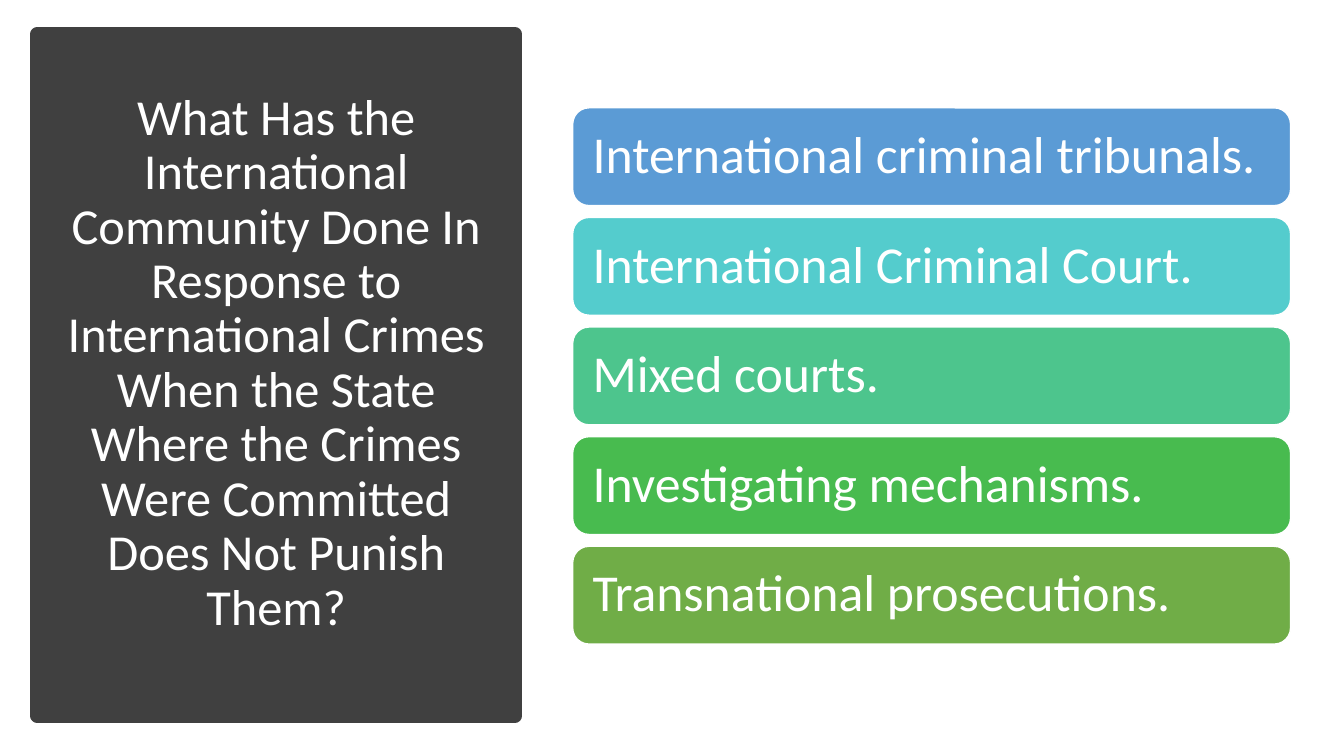
from dataclasses import dataclass

import pptx
import pptx.dml.color
import pptx.enum.shapes
import pptx.enum.text
import pptx.presentation
import pptx.shapes.autoshape
import pptx.slide
import pptx.text.text
import pptx.util

Inches = pptx.util.Inches
Pt = pptx.util.Pt
SHAPE = pptx.enum.shapes.MSO_SHAPE
ALIGN = pptx.enum.text.PP_ALIGN

COLORS = {
    "panel": "404040",
    "white": "FFFFFF",
    "tribunals": "5B9BD5",
    "court": "54CCCD",
    "mixed": "4DC58D",
    "mechanisms": "48BB4F",
    "prosecutions": "70AD47",
}
FONT = "Calibri"
QUESTION = (
    "What Has the International Community Done In Response to International "
    "Crimes When the State Where the Crimes Were Committed Does Not Punish Them?"
)
FIRST_TOP, LAST_TOP = 1.07, 5.42


@dataclass(frozen=True)
class Box:
    left: float
    top: float
    width: float
    height: float

    def lengths(self) -> tuple[pptx.util.Length, ...]:
        return tuple(Inches(v) for v in (self.left, self.top, self.width, self.height))


@dataclass(frozen=True)
class Response:
    text: str
    color: str


RESPONSES = [
    Response("International criminal tribunals.", "tribunals"),
    Response("International Criminal Court.", "court"),
    Response("Mixed courts.", "mixed"),
    Response("Investigating mechanisms.", "mechanisms"),
    Response("Transnational prosecutions.", "prosecutions"),
]


def rgb(name: str) -> pptx.dml.color.RGBColor:
    return pptx.dml.color.RGBColor.from_string(COLORS[name])


def add_block(slide: pptx.slide.Slide, kind: SHAPE, box: Box, fill: str,
              line: str, line_width: float) -> pptx.shapes.autoshape.Shape:
    block = slide.shapes.add_shape(kind, *box.lengths())
    block.shadow.inherit = False
    block.fill.solid()
    block.fill.fore_color.rgb = rgb(fill)
    block.line.color.rgb = rgb(line)
    block.line.width = Pt(line_width)
    return block


def write(frame: pptx.text.text.TextFrame, text: str, size: float, align: ALIGN) -> None:
    """Fill a frame with one vertically centred white paragraph."""
    frame.word_wrap = True
    frame.vertical_anchor = pptx.enum.text.MSO_ANCHOR.MIDDLE
    frame.text = text
    paragraph = frame.paragraphs[0]
    paragraph.alignment = align
    paragraph.line_spacing = 0.9
    font = paragraph.runs[0].font
    font.name = FONT
    font.size = Pt(size)
    font.color.rgb = rgb("white")


def add_question(slide: pptx.slide.Slide) -> None:
    add_block(slide, SHAPE.RECTANGLE, Box(0.37, 0.34, 4.74, 6.76), "panel", "panel", 10)
    question = slide.shapes.add_textbox(*Box(0.37, 0.13, 4.74, 6.96).lengths())
    write(question.text_frame, QUESTION, 36, ALIGN.CENTER)


def add_response(slide: pptx.slide.Slide, response: Response, top: float) -> None:
    bar = add_block(slide, SHAPE.ROUNDED_RECTANGLE, Box(5.68, top, 7.12, 0.97),
                    response.color, "white", 1)
    frame = bar.text_frame
    frame.margin_left = frame.margin_right = Inches(0.15)
    frame.margin_top = frame.margin_bottom = Inches(0.15)
    write(frame, response.text, 37, ALIGN.LEFT)


def main() -> None:
    deck: pptx.presentation.Presentation = pptx.Presentation()
    deck.slide_width, deck.slide_height = Inches(13.33), Inches(7.5)
    slide = deck.slides.add_slide(deck.slide_layouts[6])
    add_question(slide)
    pitch = (LAST_TOP - FIRST_TOP) / (len(RESPONSES) - 1)
    for row, response in enumerate(RESPONSES):
        add_response(slide, response, FIRST_TOP + row * pitch)
    deck.save("out.pptx")


if __name__ == "__main__":
    main()
